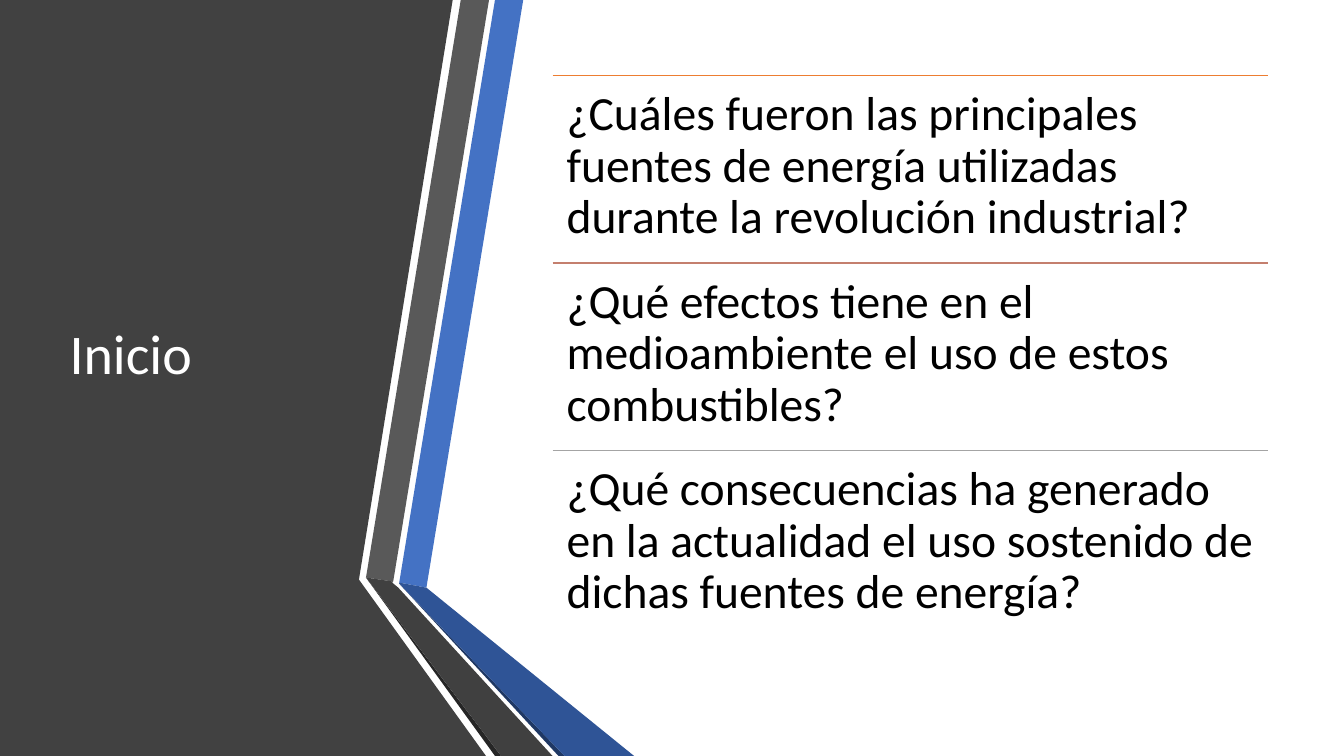
from dataclasses import dataclass

from lxml.etree import SubElement
from pptx import Presentation
from pptx.dml.color import RGBColor
from pptx.enum.shapes import MSO_CONNECTOR
from pptx.enum.text import MSO_ANCHOR, MSO_AUTO_SIZE, PP_ALIGN
from pptx.oxml.ns import qn
from pptx.util import Inches, Pt


@dataclass(frozen=True)
class Theme:
    """Colours and type sizes of the slide."""
    font: str = "Calibri"
    head: int = 40
    body: int = 34
    white: str = "FFFFFF"
    black: str = "000000"
    panel: str = "414141"
    blue: str = "4472C4"
    navy: str = "2F5496"
    night: str = "1F3864"
    gray: str = "595959"
    dark: str = "404040"
    coal: str = "262626"
    rules: tuple = ("ED7D31", "C47F6E", "A4A4A4")


class Deck:
    """Draws styled elements on the current slide."""

    def __init__(self, theme):
        self.theme = theme
        self.show = Presentation()
        self.show.slide_width = Inches(13.33)
        self.show.slide_height = Inches(7.5)
        self.slide = self.show.slides.add_slide(self.show.slide_layouts[5])
        self.shapes = self.slide.shapes

    def shape(self, points, color):
        start, *rest = [(Inches(x), Inches(y)) for x, y in points]
        pen = self.shapes.build_freeform(*start, scale=1.0)
        pen.add_line_segments(rest, close=True)
        form = pen.convert_to_shape()
        form.shadow.inherit = False
        form.fill.solid()
        form.fill.fore_color.rgb = RGBColor.from_string(color)
        form.line.fill.background()

    def rule(self, left, top, width, color):
        line = self.shapes.add_connector(
            MSO_CONNECTOR.STRAIGHT, Inches(left), Inches(top),
            Inches(left + width), Inches(top))
        line.line.color.rgb = RGBColor.from_string(color)
        line.line.width = Pt(1)
        SubElement(line.element.spPr, qn("a:effectLst"))

    def format(self, box, text, size, color, anchor, pad):
        frame = box.text_frame
        frame.text = text
        style = {
            "word_wrap": True, "auto_size": MSO_AUTO_SIZE.NONE,
            "vertical_anchor": anchor,
            "margin_left": Inches(pad[0]), "margin_right": Inches(pad[0]),
            "margin_top": Inches(pad[1]), "margin_bottom": Inches(pad[1]),
        }
        for name, value in style.items():
            setattr(frame, name, value)
        para = frame.paragraphs[0]
        para.alignment = PP_ALIGN.LEFT
        para.line_spacing = 0.9
        font = para.runs[0].font
        for name, value in {"name": self.theme.font, "size": Pt(size)}.items():
            setattr(font, name, value)
        font.color.rgb = RGBColor.from_string(color)

    def title(self, text, left, top, width, height):
        box = self.shapes.title
        place = {"left": left, "top": top, "width": width, "height": height}
        for name, value in place.items():
            setattr(box, name, Inches(value))
        self.format(box, text, self.theme.head, self.theme.white,
                    MSO_ANCHOR.MIDDLE, (0.1, 0.05))
        box.element.getparent().append(box.element)

    def text(self, text, *place):
        box = self.shapes.add_textbox(*map(Inches, place))
        self.format(box, text, self.theme.body, self.theme.black,
                    MSO_ANCHOR.TOP, (0.14, 0.14))


def main():
    """Build and save the slide."""
    theme = Theme()
    deck = Deck(theme)
    bands = [
        (theme.panel, [(0, 0), (4.49, 0), (3.56, 5.75), (4.82, 7.5), (0, 7.5)]),
        (theme.blue, [(3.96, 5.78), (4.23, 5.83), (5.19, 0), (4.91, 0)]),
        (theme.gray, [(4.85, 0), (4.57, 0), (3.63, 5.73), (3.9, 5.77)]),
        (theme.coal, [(3.63, 5.73), (4.91, 7.5), (4.97, 7.5)]),
        (theme.night, [(3.96, 5.79), (5.54, 7.5), (5.6, 7.5)]),
        (theme.navy, [(3.96, 5.79), (5.6, 7.5), (6.29, 7.5), (4.23, 5.83),
                      (3.96, 5.78)]),
        (theme.dark, [(5.48, 7.5), (3.95, 5.83), (3.89, 5.78), (3.9, 5.77),
                      (3.63, 5.73), (4.97, 7.5)]),
    ]
    for color, points in bands:
        deck.shape(points, color)

    deck.title("Inicio", 0.59, 0.75, 3.04, 5.58)

    asks = [
        "¿Cuáles fueron las principales fuentes de energía utilizadas "
        "durante la revolución industrial?",
        "¿Qué efectos tiene en el medioambiente el uso de estos combustibles?",
        "¿Qué consecuencias ha generado en la actualidad el uso sostenido de "
        "dichas fuentes de energía?",
    ]
    left, top, width, step = 5.48, 0.75, 7.1, 1.86
    for row, (ask, color) in enumerate(zip(asks, theme.rules)):
        y = top + row * step
        deck.rule(left, y, width, color)
        deck.text(ask, left, y, width, step)

    deck.show.save("out.pptx")


if __name__ == "__main__":
    main()
